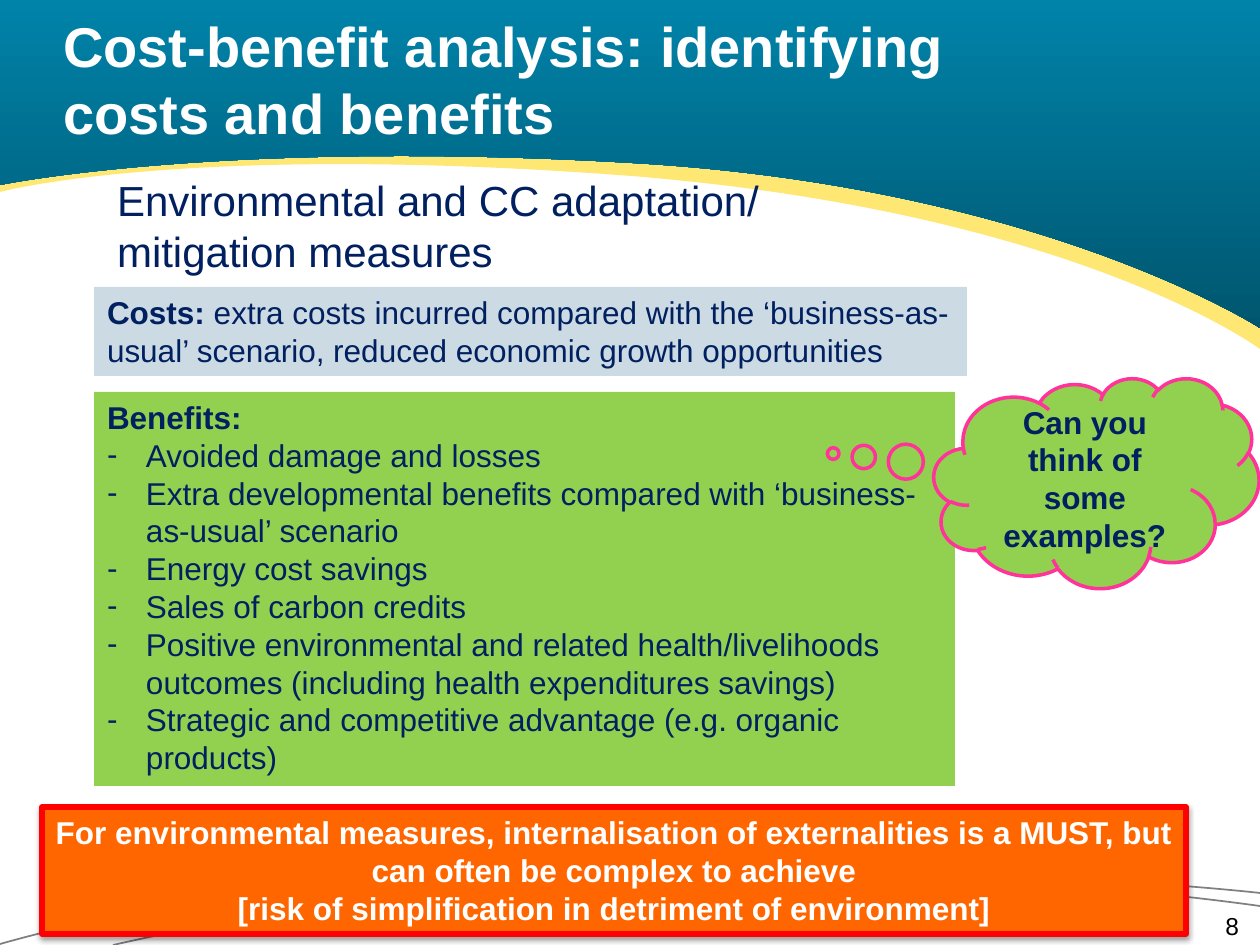
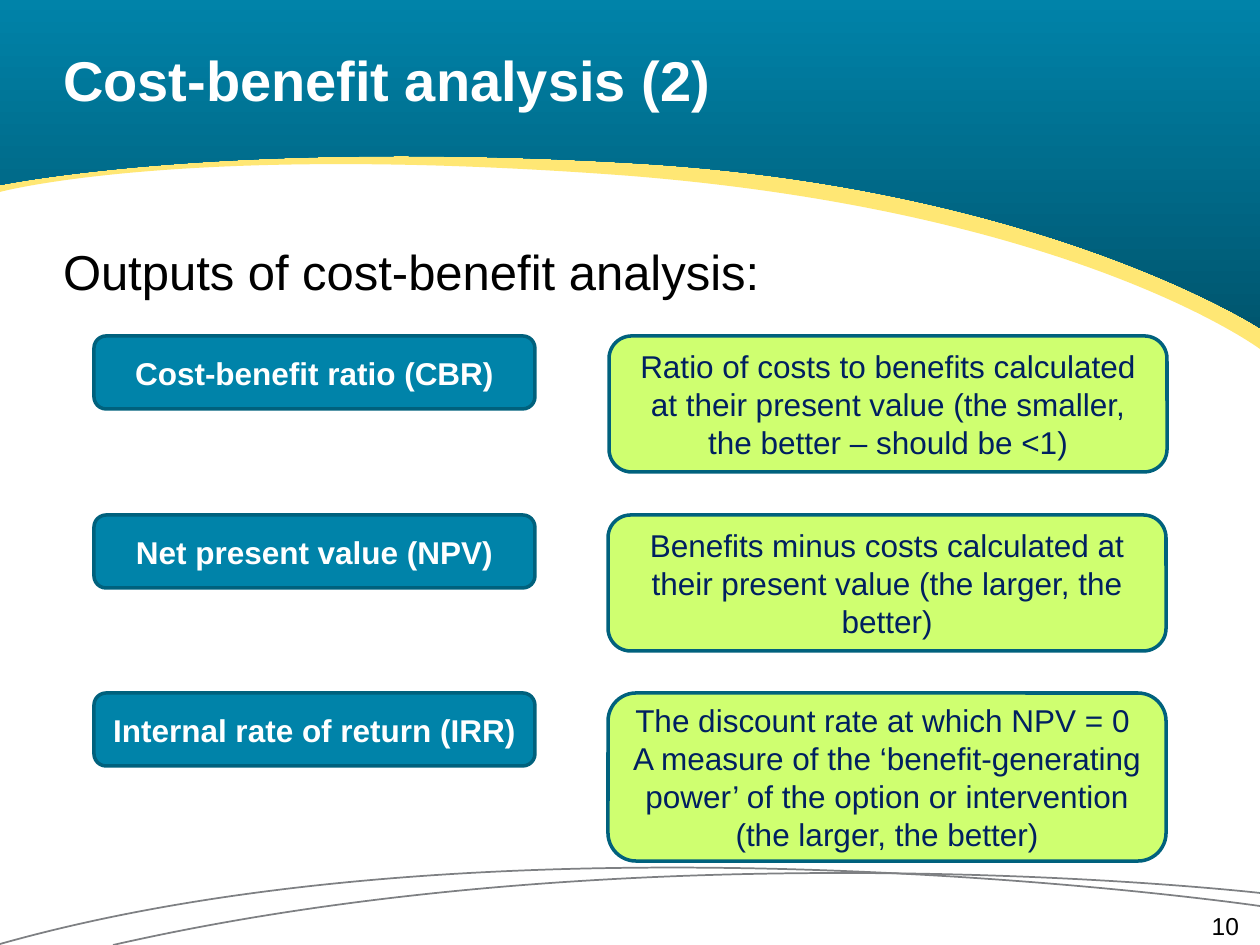
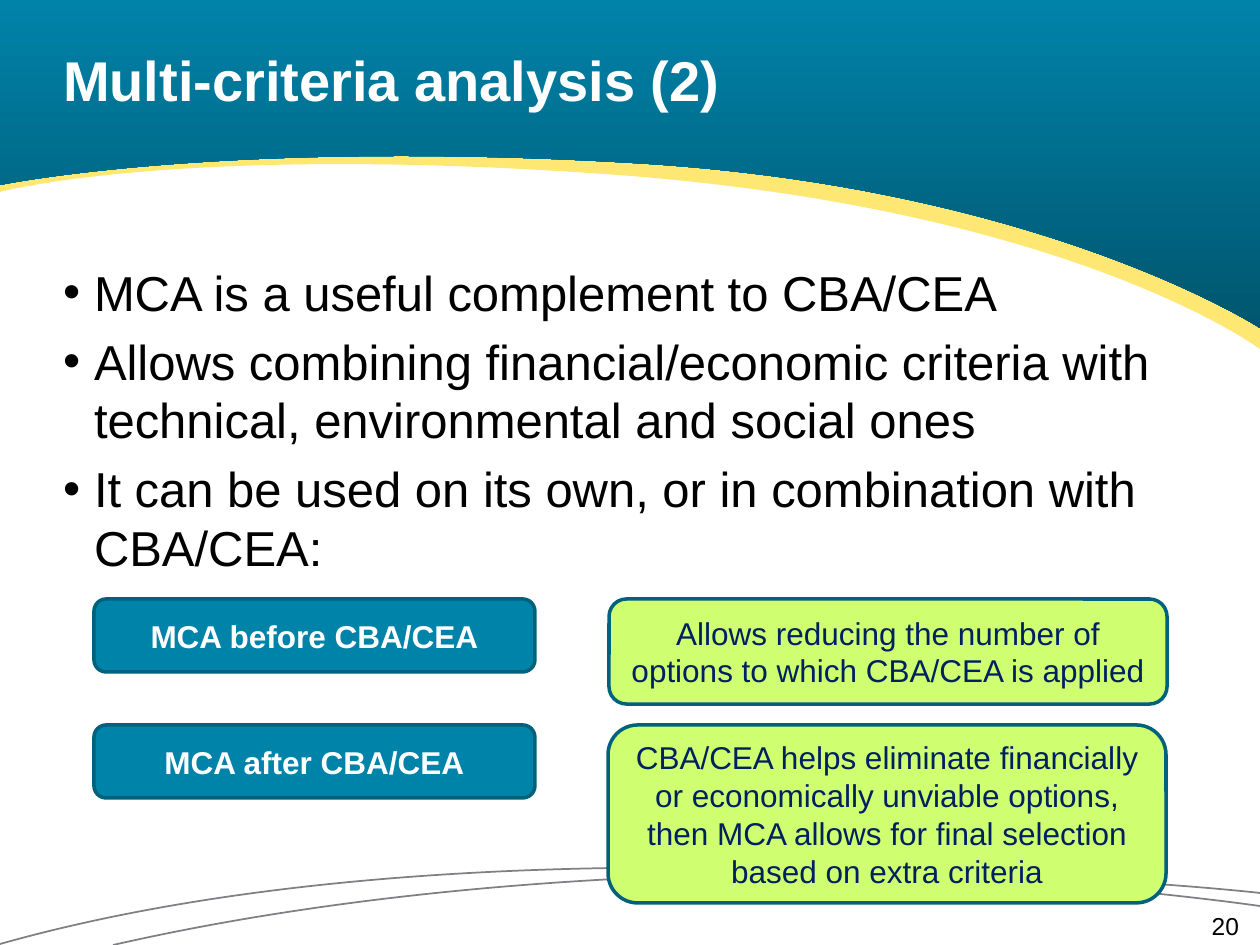
from lxml import etree
from pptx import Presentation
from pptx.dml.color import RGBColor
from pptx.enum.shapes import MSO_SHAPE as Preset
from pptx.enum.text import MSO_ANCHOR as Anchor, MSO_AUTO_SIZE as AutoSize, PP_ALIGN as Align
from pptx.oxml import parse_xml
from pptx.oxml.ns import nsdecls, qn
from pptx.util import Pt

PX = 914400 / 126
FONT = "Arial"
COLORS = {
    "white": "FFFFFF", "black": "000000", "navy": "002060", "gray": "7E8083",
    "yellow": "FFE774", "blue": "0083A9", "deep_blue": "00566F", "edge": "00617D",
    "pale_blue": "CCDAE3", "green": "92D050", "lime": "CFFF70",
    "pink": "FF3399", "orange": "FF6600", "red": "FF0000",
}
RGB = {name: RGBColor.from_string(value) for name, value in COLORS.items()}


def fill_text(shape, paragraphs, size, color, bold=False, align=Align.LEFT,
              anchor=Anchor.TOP, inset=True, bullet=None, indent=0, before=0):
    """Write paragraphs; a tuple holds spans, the first bold, and takes no bullet."""
    frame = shape.text_frame
    margins = (13, 6, 13, 6) if inset else (0, 0, 0, 0)
    settings = dict(zip(("margin_left", "margin_top", "margin_right", "margin_bottom"),
                        (round(margin * PX) for margin in margins)))
    settings.update(word_wrap=True, auto_size=AutoSize.NONE, vertical_anchor=anchor)
    for name, value in settings.items():
        setattr(frame, name, value)
    for index, content in enumerate(paragraphs):
        para = frame.add_paragraph() if index else frame.paragraphs[0]
        para.alignment = align
        para.space_before = Pt(before)
        spans = content if isinstance(content, tuple) else (content,)
        for position, text in enumerate(spans):
            if text == "\n":
                para.add_line_break()
                continue
            span = para.add_run()
            span.text = text
            lead = isinstance(content, tuple) and position == 0
            for name, value in {"name": FONT, "size": Pt(size), "bold": bold or lead}.items():
                setattr(span.font, name, value)
            span.font.color.rgb = RGB[color]
        if bullet and not isinstance(content, tuple):
            props = para._p.get_or_add_pPr()
            props.set("marL", str(round(indent * PX)))
            props.set("indent", str(-round(indent * PX)))
            etree.SubElement(props, qn("a:buFont")).set("typeface", FONT)
            etree.SubElement(props, qn("a:buChar")).set("char", bullet)


def draw_curve(page, points, close=False):
    """Draw cubic curves: a start, then three points for each; a spare point is a line."""
    builder = page.shapes.build_freeform(*points[0], scale=PX)
    builder.add_line_segments(points[1:], close=close)
    shape = builder.convert_to_shape()
    shape.shadow.inherit = False
    lines = list(shape._element.iter(qn("a:lnTo")))
    for first in range(0, len(lines) - 2, 3):
        curve = etree.Element(qn("a:cubicBezTo"))
        lines[first].addprevious(curve)
        for line in lines[first:first + 3]:
            curve.append(line[0])
            line.getparent().remove(line)
    return shape


deck = Presentation()
deck.slide_width, deck.slide_height = round(1260 * PX), round(945 * PX)
layout = deck.slide_layouts[5]
pages = [deck.slides.add_slide(layout) for _ in range(3)]
costs_page, outputs_page, criteria_page = pages

# Shared curves, drawn once and moved to the layout
ARCS = [
    [(1260, 893), (1260, 893), (649, 823), (113, 945)],
    [(1260, 906), (1260, 906), (517, 798), (0, 944)],
]
BANDS = {
    "yellow": [(1260, 349), (1260, 349), (1076, 212), (631, 176),
               (185, 142), (0, 192), (0, 192)],
    "blue": [(1260, 328), (1260, 328), (1041, 186), (631, 163),
             (221, 139), (0, 185), (0, 185)],
}
TOP_CORNERS = [(0, -1)] * 3 + [(1260, -1)] * 3
backdrop = []
for points in ARCS:
    arc = draw_curve(costs_page, points)
    arc.fill.background()
    arc.line.color.rgb = RGB["gray"]
    arc.line.width = Pt(1)
    backdrop.append(arc)
for color, points in BANDS.items():
    band = draw_curve(costs_page, points + TOP_CORNERS + points[:1], close=True)
    band.line.fill.background()
    if color == "blue":
        band.fill.gradient()
        band.fill.gradient_angle = 270
        for stop, shade in zip(band.fill.gradient_stops, ("blue", "deep_blue")):
            stop.color.rgb = RGB[shade]
    else:
        band.fill.solid()
        band.fill.fore_color.rgb = RGB[color]
    backdrop.append(band)
for position, shape in enumerate(backdrop, start=2):
    layout.shapes._spTree.insert(position, shape._element)

# Titles and page numbers
for page, title_text, number in [
    (costs_page, ("Cost-benefit analysis: identifying", "\n", "costs and benefits"), "8"),
    (outputs_page, "Cost-benefit analysis (2)", "10"),
    (criteria_page, "Multi-criteria analysis (2)", "20"),
]:
    title = page.shapes.title
    for name, value in dict(left=63, top=0, width=1176, height=158).items():
        setattr(title, name, round(value * PX))
    fill_text(title, [title_text], 32, "white", bold=True, anchor=Anchor.MIDDLE, inset=False)

    number_box = page.shapes.add_textbox(*(round(v * PX) for v in (945, 911, 294, 23)))
    fill_text(number_box, [number], 14, "black", align=Align.RIGHT, inset=False)

# Plain text
BODY = dict(size=28, color="black", inset=False, before=5.8)
for page, place, paragraphs, text_format in [
    (costs_page, (104, 169, 861, 115),
     ["Environmental and CC adaptation/", "mitigation measures"], dict(size=24, color="navy")),
    (outputs_page, (63, 242, 1176, 662), ["Outputs of cost-benefit analysis:"], BODY),
    (criteria_page, (63, 262, 1176, 662), [
        "MCA is a useful complement to CBA/CEA",
        "Allows combining financial/economic criteria with technical, environmental "
        "and social ones",
        "It can be used on its own, or in combination with CBA/CEA:",
    ], dict(BODY, bullet="•", indent=31)),
]:
    box = page.shapes.add_textbox(*(round(v * PX) for v in place))
    fill_text(box, paragraphs, **text_format)

# Box styles: preset, fill, line, line width, text format
CENTERED = dict(align=Align.CENTER, anchor=Anchor.MIDDLE)
STYLES = {
    "costs": (Preset.RECTANGLE, "pale_blue", None, 0, dict(color="navy")),
    "benefits": (Preset.RECTANGLE, "green", None, 0,
                 dict(color="navy", bullet="-", indent=39)),
    "cloud": (Preset.CLOUD_CALLOUT, "green", "pink", 2,
              dict(CENTERED, color="navy", bold=True)),
    "warning": (Preset.RECTANGLE, "orange", "red", 3,
                dict(color="white", bold=True, align=Align.CENTER)),
    "term": (Preset.ROUNDED_RECTANGLE, "blue", "edge", 2,
             dict(CENTERED, color="white", bold=True)),
    "meaning": (Preset.ROUNDED_RECTANGLE, "lime", "edge", 2, dict(CENTERED, color="navy")),
}

# Costs and benefits
boxes = [
    (costs_page, "costs", (94, 287, 873, 89), [
        ("Costs:", " extra costs incurred compared with the ‘business-as-usual’ scenario, "
         "reduced economic growth opportunities")]),
    (costs_page, "benefits", (94, 392, 861, 394), [
        ("Benefits:",),
        "Avoided damage and losses",
        "Extra developmental benefits compared with ‘business-as-usual’ scenario",
        "Energy cost savings",
        "Sales of carbon credits",
        "Positive environmental and related health/livelihoods outcomes "
        "(including health expenditures savings)",
        "Strategic and competitive advantage (e.g. organic products)"]),
    (costs_page, "cloud", (934, 378, 325, 210), ["Can you think of some examples?"]),
    (costs_page, "warning", (42, 807, 1144, 127), [
        "For environmental measures, internalisation of externalities is a MUST, "
        "but can often be complex to achieve",
        "[risk of simplification in detriment of environment]"]),
]

# Terms with their meanings
for page, left, top, height, term, meaning in [
    (outputs_page, 609, 336, 136, "Cost-benefit ratio (CBR)",
     ["Ratio of costs to benefits calculated at their present value "
      "(the smaller, the better – should be <1)"]),
    (outputs_page, 608, 515, 136, "Net present value (NPV)",
     ["Benefits minus costs calculated at their present value (the larger, the better)"]),
    (outputs_page, 608, 693, 168, "Internal rate of return (IRR)",
     ["The discount rate at which NPV = 0 ",
      "A measure of the ‘benefit-generating power’ of the option or intervention "
      "(the larger, the better)"]),
    (criteria_page, 609, 599, 105, "MCA before CBA/CEA",
     ["Allows reducing the number of options to which CBA/CEA is applied"]),
    (criteria_page, 608, 725, 178, "MCA after CBA/CEA",
     ["CBA/CEA helps eliminate financially or economically unviable options, "
      "then MCA allows for final selection based on extra criteria"]),
]:
    boxes.append((page, "term", (94, top, 441, 73), [term]))
    boxes.append((page, "meaning", (left, top, 558, height), meaning))

# Draw all boxes
for page, style, place, paragraphs in boxes:
    preset, fill, line, line_width, text_format = STYLES[style]
    box = page.shapes.add_shape(preset, *(round(v * PX) for v in place))
    box.fill.solid()
    box.fill.fore_color.rgb = RGB[fill]
    if line:
        box.line.color.rgb = RGB[line]
        box.line.width = Pt(line_width)
    else:
        box.line.fill.background()
    box.shadow.inherit = False
    if style == "cloud":
        box.adjustments[0], box.adjustments[1] = -0.81, -0.14
    if style == "warning":
        effects = box._element.spPr.find(qn("a:effectLst"))
        effects.append(parse_xml(
            f'<a:outerShdw {nsdecls("a")} blurRad="{Pt(3.1)}" dist="{Pt(1.6)}" '
            f'dir="5400000" rotWithShape="0"><a:srgbClr val="{COLORS["black"]}">'
            '<a:alpha val="38000"/></a:srgbClr></a:outerShdw>'))
    fill_text(box, paragraphs, size=18, **text_format)

deck.save("out.pptx")
